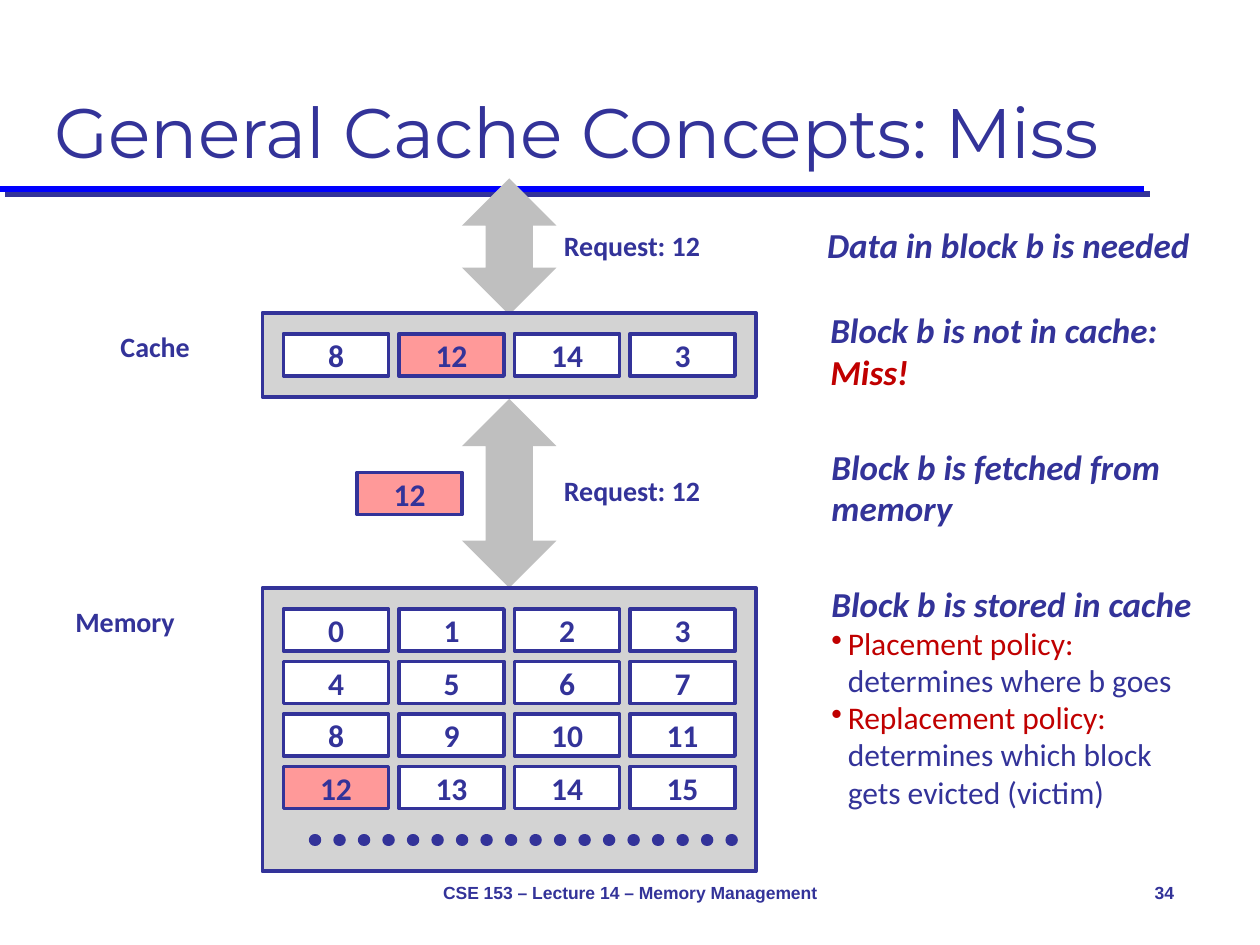
from dataclasses import dataclass
from itertools import chain

from pptx import Presentation
from pptx.dml.color import RGBColor
from pptx.enum.dml import MSO_LINE
from pptx.enum.shapes import MSO_CONNECTOR, MSO_SHAPE
from pptx.enum.text import MSO_ANCHOR, MSO_AUTO_SIZE, PP_ALIGN
from pptx.oxml import parse_xml
from pptx.oxml.ns import nsdecls
from pptx.util import Inches, Pt

"""Builds the slide on a grid of 120 columns and 90 rows, each a twelfth of an inch."""

COLORS = {"ink": "333399", "rule": "0000FF", "arrow": "BFBFBF", "frame": "D3D3D3",
          "plain": "FFFFFF", "hit": "FF9999", "alert": "C00000"}
BLOCK_WIDTH, BLOCK_HEIGHT = 10, 4
COLUMN_STEP, ROW_STEP = 11, 5
MEMORY_BLOCKS = [[str(row * 4 + column) for column in range(4)] for row in range(4)]
CACHE_BLOCKS = [["8", "12", "14", "3"]]
REQUESTED = "12"

LABEL = {"name": "Calibri", "size": Pt(16), "bold": True}
NUMBER = {"name": "Calibri", "size": Pt(18), "bold": True}
STEP = {"name": "Calibri", "size": Pt(20), "bold": True, "italic": True}
POLICY = {"name": "Calibri", "size": Pt(18), "bold": False, "italic": False}
FOOTER = {"name": "Arial", "size": Pt(10), "bold": True}
TITLE = {"name": "Montserrat", "size": Pt(40), "bold": False}


@dataclass(frozen=True)
class Area:
    """A rectangle in grid columns and rows."""
    column: float
    row: float
    width: float
    height: float

    def lengths(self):
        return tuple(grid(value) for value in (self.column, self.row, self.width, self.height))


@dataclass(frozen=True)
class Line:
    """One line of text, with its format and colour."""
    text: str
    font: dict
    color: str = "ink"


@dataclass(frozen=True)
class Note:
    """A text box; each paragraph is a tuple of lines."""
    area: Area
    paragraphs: tuple
    alignment: PP_ALIGN = PP_ALIGN.LEFT
    anchor: MSO_ANCHOR = MSO_ANCHOR.MIDDLE
    spacing: float = 1.0
    grows: bool = True


def grid(units: float):
    return Inches(units / 12)


def color(name: str) -> RGBColor:
    return RGBColor.from_string(COLORS[name])


def set_values(target, values: dict) -> None:
    for name, value in values.items():
        setattr(target, name, value)


def write_line(paragraph, line: Line) -> None:
    run = paragraph.add_run()
    run.text = line.text
    set_values(run.font, line.font)
    run.font.color.rgb = color(line.color)


def add_bullet(paragraph) -> None:
    properties = paragraph._p.get_or_add_pPr()
    properties.set("marL", str(Inches(0.13)))
    properties.set("indent", str(-Inches(0.13)))
    properties.append(parse_xml(f'<a:buChar {nsdecls("a")} char="•"/>'))


def add_note(slide, note: Note) -> None:
    frame = slide.shapes.add_textbox(*note.area.lengths()).text_frame
    fit = MSO_AUTO_SIZE.SHAPE_TO_FIT_TEXT if note.grows else MSO_AUTO_SIZE.NONE
    set_values(frame, {"word_wrap": False, "auto_size": fit, "vertical_anchor": note.anchor})
    for index, lines in enumerate(note.paragraphs):
        paragraph = frame.add_paragraph() if index else frame.paragraphs[0]
        set_values(paragraph, {"alignment": note.alignment, "line_spacing": note.spacing})
        if lines[0].font is POLICY:
            add_bullet(paragraph)
        for position, line in enumerate(lines):
            if position:
                paragraph.add_line_break()
            write_line(paragraph, line)


def add_box(slide, area: Area, fill: str, outlined: bool = True, preset=MSO_SHAPE.RECTANGLE):
    shape = slide.shapes.add_shape(preset, *area.lengths())
    shape.shadow.inherit = False
    shape.fill.solid()
    shape.fill.fore_color.rgb = color(fill)
    if outlined:
        shape.line.color.rgb = color("ink")
        shape.line.width = Pt(2.25)
    else:
        shape.line.fill.background()
    return shape


def add_block(slide, column: float, row: float, number: str) -> None:
    fill = "hit" if number == REQUESTED else "plain"
    frame = add_box(slide, Area(column, row, BLOCK_WIDTH, BLOCK_HEIGHT), fill).text_frame
    set_values(frame, {"margin_top": 0, "margin_bottom": 0, "vertical_anchor": MSO_ANCHOR.MIDDLE})
    frame.paragraphs[0].alignment = PP_ALIGN.CENTER
    write_line(frame.paragraphs[0], Line(number, NUMBER))


def add_store(slide, area: Area, first_row: float, blocks: list) -> None:
    add_box(slide, area, "frame")
    for row, numbers in enumerate(blocks):
        for column, number in enumerate(numbers):
            add_block(slide, area.column + 2 + column * COLUMN_STEP,
                      first_row + row * ROW_STEP, number)


def add_line(slide, start: float, end: float, row: float, name: str, width: float, effect: str = ""):
    connector = slide.shapes.add_connector(
        MSO_CONNECTOR.STRAIGHT, grid(start), grid(row), grid(end), grid(row))
    connector.line.color.rgb = color(name)
    connector.line.width = Pt(width)
    connector._element.spPr.append(
        parse_xml(f'<a:effectLst {nsdecls("a")}>{effect}</a:effectLst>'))
    return connector


def step(column: float, row: float, width: float, height: float, *paragraphs) -> Note:
    return Note(Area(column, row, width, height), paragraphs, spacing=0.98)


def single(area: Area, text: str, font: dict, **options) -> Note:
    return Note(area, ((Line(text, font),),), **options)


LABELS = [
    single(Area(10.3, 30.8, 12.5, 6.1), "Cache", LABEL, anchor=MSO_ANCHOR.TOP),
    single(Area(6, 57, 16.8, 6.1), "Memory", LABEL, anchor=MSO_ANCHOR.TOP),
    *[single(Area(52.4, row, 15.6, 4.4), "Request: 12", LABEL,
             alignment=PP_ALIGN.CENTER, anchor=MSO_ANCHOR.TOP) for row in (21.2, 44.5)],
]
STEPS = [
    step(77.6, 20.8, 37.1, 5.2, (Line("Data in block b is needed", STEP),)),
    step(77.9, 29, 33.7, 9.1, (Line("Block b is not in cache:", STEP),),
         (Line("Miss!", STEP, "alert"),)),
    step(78, 42, 34, 9.1, (Line("Block b is fetched from", STEP),), (Line("memory", STEP),)),
    step(78, 55, 36.8, 23, (Line("Block b is stored in cache", STEP),),
         (Line("Placement policy:", POLICY, "alert"), Line("determines where b goes", POLICY)),
         (Line("Replacement policy:", POLICY, "alert"), Line("determines which block", POLICY),
          Line("gets evicted (victim)", POLICY))),
]
FOOTERS = [
    single(Area(41, 82, 38, 6), "CSE 153 – Lecture 14 – Memory Management", FOOTER,
           alignment=PP_ALIGN.CENTER, grows=False),
    single(Area(105, 82, 8, 6), "34", FOOTER, alignment=PP_ALIGN.RIGHT, grows=False),
]


def main() -> None:
    presentation = Presentation()
    set_values(presentation, {"slide_width": grid(120), "slide_height": grid(90)})
    slide = presentation.slides.add_slide(presentation.slide_layouts[5])

    title = slide.shapes.title
    set_values(title, dict(zip(("left", "top", "width", "height"), Area(4, 2, 112, 15).lengths())))
    set_values(title.text_frame, {"vertical_anchor": MSO_ANCHOR.BOTTOM, "word_wrap": True,
                                  "auto_size": MSO_AUTO_SIZE.NONE})
    title.text_frame.paragraphs[0].alignment = PP_ALIGN.LEFT
    write_line(title.text_frame.paragraphs[0], Line("General Cache Concepts: Miss", TITLE))

    shadow = (f'<a:outerShdw dist="{Pt(4.2)}" dir="2700000" algn="ctr" rotWithShape="0">'
              f'<a:srgbClr val="{COLORS["ink"]}"/></a:outerShdw>')
    add_line(slide, 0, 109, 18, "rule", 3.5, shadow)
    for row, height in ((17, 13), (38, 18)):
        add_box(slide, Area(44, row, 9, height), "arrow", False, MSO_SHAPE.UP_DOWN_ARROW)
    add_store(slide, Area(25, 56, 47, 27), 58, MEMORY_BLOCKS)
    add_store(slide, Area(25, 29.8, 47, 8), 31.8, CACHE_BLOCKS)
    add_block(slide, 34, 45, REQUESTED)
    dots = add_line(slide, 30, 70, 80, "ink", 7)
    dots.line.dash_style = MSO_LINE.ROUND_DOT
    dots.line._get_or_add_ln().set("cap", "rnd")
    for note in chain(LABELS, STEPS, FOOTERS):
        add_note(slide, note)
    presentation.save("out.pptx")


if __name__ == "__main__":
    main()
